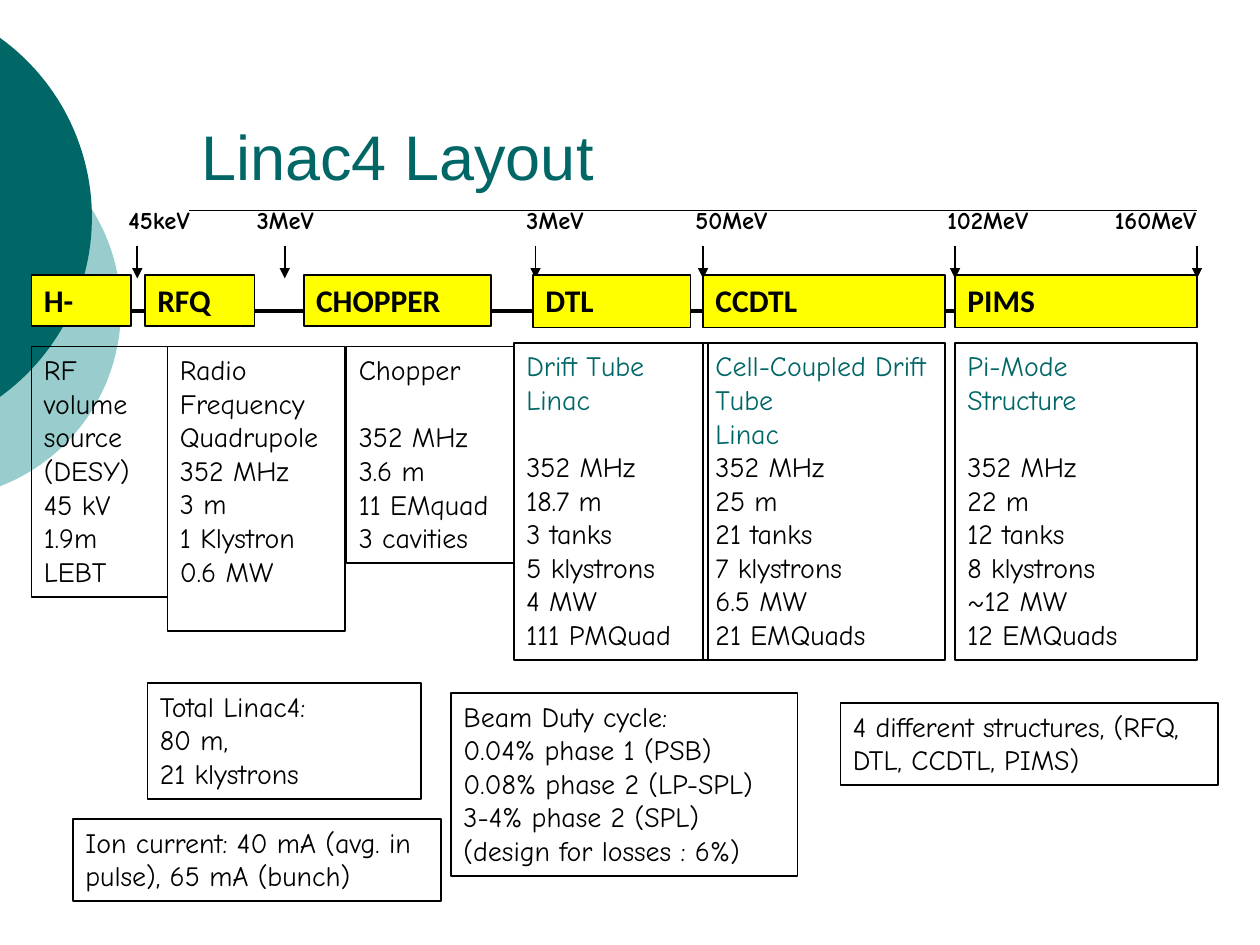
import math
import pptx
import pptx.util
import pptx.dml.color
import pptx.enum.shapes
import pptx.enum.text
import pptx.oxml.ns
from lxml import etree

PX = 9144  # EMU per px, 100 px to the inch
RECT = pptx.enum.shapes.MSO_SHAPE.RECTANGLE
LINE = pptx.enum.shapes.MSO_CONNECTOR.STRAIGHT
ANCHOR = pptx.enum.text.MSO_ANCHOR
LEFT = pptx.enum.text.PP_ALIGN.LEFT
qn = pptx.oxml.ns.qn


class Theme:
    teal = pptx.dml.color.RGBColor(0x00, 0x66, 0x66)
    pale = pptx.dml.color.RGBColor(0x99, 0xCC, 0xCC)
    gold = pptx.dml.color.RGBColor(0xFF, 0xFF, 0x00)
    ink = pptx.dml.color.RGBColor(0, 0, 0)
    thin = pptx.util.Pt(1)
    thick = pptx.util.Pt(2.25)
    gap = pptx.util.Pt(19.2)  # one line of body text
    title = {"name": "Arial", "size": pptx.util.Pt(36)}
    stage = {"name": "Calibri", "size": pptx.util.Pt(18), "bold": True}
    label = {"name": "Comic Neue", "size": pptx.util.Pt(14), "bold": True}
    body = {"name": "Comic Neue", "size": pptx.util.Pt(16)}


def emu(*vals):
    return [round(v * PX) for v in vals]


def style(item, form):
    for key, val in form.items():
        setattr(item, key, val)


def write(shape, lines, font, heads=0, gap=None, anchor=ANCHOR.TOP):
    """Fill a shape; the first `heads` lines are teal, `gap` is a spaced line."""
    frame = shape.text_frame
    style(frame, {"word_wrap": True, "vertical_anchor": anchor})
    for i, line in enumerate(lines):
        para = frame.paragraphs[0] if i == 0 else frame.add_paragraph()
        para.alignment = LEFT
        if i == gap:
            para.space_before = Theme.gap
        run = para.add_run()
        run.text = line
        style(run.font, font)
        run.font.color.rgb = Theme.teal if i < heads else Theme.ink


def panel(slide, box, lines, font, fill=None, **opts):
    shape = slide.shapes.add_shape(RECT, *emu(*box))
    shape.shadow.inherit = False
    if fill is None:
        shape.fill.background()
    else:
        shape.fill.solid()
        shape.fill.fore_color.rgb = fill
    shape.line.color.rgb = Theme.ink
    shape.line.width = Theme.thin
    write(shape, lines, font, **opts)


def rule(slide, ends, width, arrow=False):
    line = slide.shapes.add_connector(LINE, *emu(*ends))
    line.line.color.rgb = Theme.ink
    line.line.width = width
    props = line.element.spPr
    if arrow:
        etree.SubElement(props.find(qn("a:ln")), qn("a:tailEnd"), type="triangle")
    etree.SubElement(props, qn("a:effectLst"))


def arc(slide, box, fill):
    """Circle segment whose flat side is the left edge of the box."""
    x, y, w, h = box
    half = h / 2
    rad = (half ** 2 + w ** 2) / (2 * w)
    turn = math.asin(half / rad)
    steps = 60
    angles = [turn * (2 * i / steps - 1) for i in range(steps + 1)]
    dots = [emu(x + w - rad + rad * math.cos(a), y + half + rad * math.sin(a))
            for a in angles]
    pen = slide.shapes.build_freeform(*dots[0], scale=1.0)
    pen.add_line_segments(dots[1:], close=True)
    shape = pen.convert_to_shape()
    shape.shadow.inherit = False
    shape.fill.solid()
    shape.fill.fore_color.rgb = fill
    shape.line.fill.background()


def header(slide, box, text):
    x, y, w, h = box
    rule(slide, (x, y + h, x + w, y + h), Theme.thin)
    area = slide.shapes.add_textbox(*emu(x, y, w, h - 9))
    write(area, [text], Theme.title, heads=1, anchor=ANCHOR.BOTTOM)


def links(slide, box, spans):
    x, y, w, h = box
    for a, b in spans:
        rule(slide, (x + a, y + 29, x + b, y + 29), Theme.thick)


def beam(slide, box, stages):
    x, y, w, h = box
    for name, left, width, high in stages:
        panel(slide, (x + left, y, width, high), [name], Theme.stage, Theme.gold)


def energy(slide, box, marks):
    x, y, w, h = box
    for text, left, width, tip in marks:
        area = slide.shapes.add_textbox(*emu(x + left, y, width, 33))
        write(area, [text], Theme.label)
        rule(slide, (x + tip, y + 37, x + tip, y + h), Theme.thin, arrow=True)


def cards(slide, box, items):
    x, y, w, h = box
    for (left, top, width, high), lines, opts in items:
        panel(slide, (x + left, y + top, width, high), lines, Theme.body, **opts)


STAGES = [("H-", 0, 79, 41), ("RFQ", 90, 87, 41), ("CHOPPER", 216, 149, 41),
          ("CCDTL", 533, 192, 42), ("PIMS", 733, 192, 42)]
DRIFT = [("DTL", 398, 125, 42)]  # lies over its arrow tip
SPANS = [(75, 92), (177, 216), (358, 400), (517, 533), (725, 733)]
# text, left, width, arrow
MARKS = [("45keV", 67, 79, 84), ("3MeV", 169, 73, 201), ("3MeV", 383, 73, 400),
         ("50MeV", 517, 85, 533), ("102MeV", 717, 98, 733),
         ("160MeV", 850, 97, 925)]
SPECS = [
    ((0, 3, 108, 199),
     ["RF volume", "source", "(DESY)", "45 kV", "1.9m", "LEBT"], {}),
    ((108, 3, 141, 226),
     ["Radio", "Frequency", "Quadrupole", "352 MHz", "3 m", "1 Klystron",
      "0.6 MW"], {}),
    ((250, 3, 133, 172),
     ["Chopper", "352 MHz", "3.6 m", "11 EMquad", "3 cavities"], {"gap": 1}),
    ((383, 0, 154, 252),
     ["Drift Tube", "Linac", "352 MHz", "18.7 m", "3 tanks", "5 klystrons",
      "4 MW", "111 PMQuad"], {"heads": 2, "gap": 2}),
    ((533, 0, 192, 252),
     ["Cell-Coupled Drift Tube", "Linac", "352 MHz", "25 m", "21 tanks",
      "7 klystrons", "6.5 MW", "21 EMQuads"], {"heads": 2}),
    ((733, 0, 192, 252),
     ["Pi-Mode Structure", "352 MHz", "22 m", "12 tanks", "8 klystrons",
      "~12 MW", "12 EMQuads"], {"heads": 1, "gap": 1}),
]
NOTES = [
    ((59, 0, 217, 92), ["Total Linac4:", "80 m,", "21 klystrons"], {}),
    ((0, 108, 292, 65), ["Ion current: 40 mA (avg. in pulse), 65 mA (bunch)"], {}),
    ((300, 8, 275, 145),
     ["Beam Duty cycle:", "0.04% phase 1 (PSB)", "0.08% phase 2 (LP-SPL)",
      "3-4% phase 2 (SPL)", "(design for losses : 6%)"], {}),
    ((609, 16, 300, 65), ["4 different structures, (RFQ, DTL, CCDTL, PIMS)"], {}),
]


def main():
    deck = pptx.Presentation()
    style(deck, dict(zip(("slide_width", "slide_height"), emu(1000, 750))))
    slide = deck.slides.add_slide(deck.slide_layouts[6])
    # Backdrop and title
    arc(slide, (0, 106, 96, 280), Theme.pale)
    arc(slide, (0, 30, 73, 285), Theme.teal)
    header(slide, (150, 33, 800, 134), "Linac4 Layout")
    # Beam line with its energies
    line = (25, 218, 925, 42)
    links(slide, line, SPANS)
    beam(slide, line, STAGES)
    energy(slide, (25, 158, 950, 63), MARKS)
    beam(slide, line, DRIFT)
    # Details of each stage, then totals
    cards(slide, (25, 272, 925, 252), SPECS)
    cards(slide, (58, 542, 909, 173), NOTES)
    deck.save("out.pptx")


if __name__ == "__main__":
    main()
